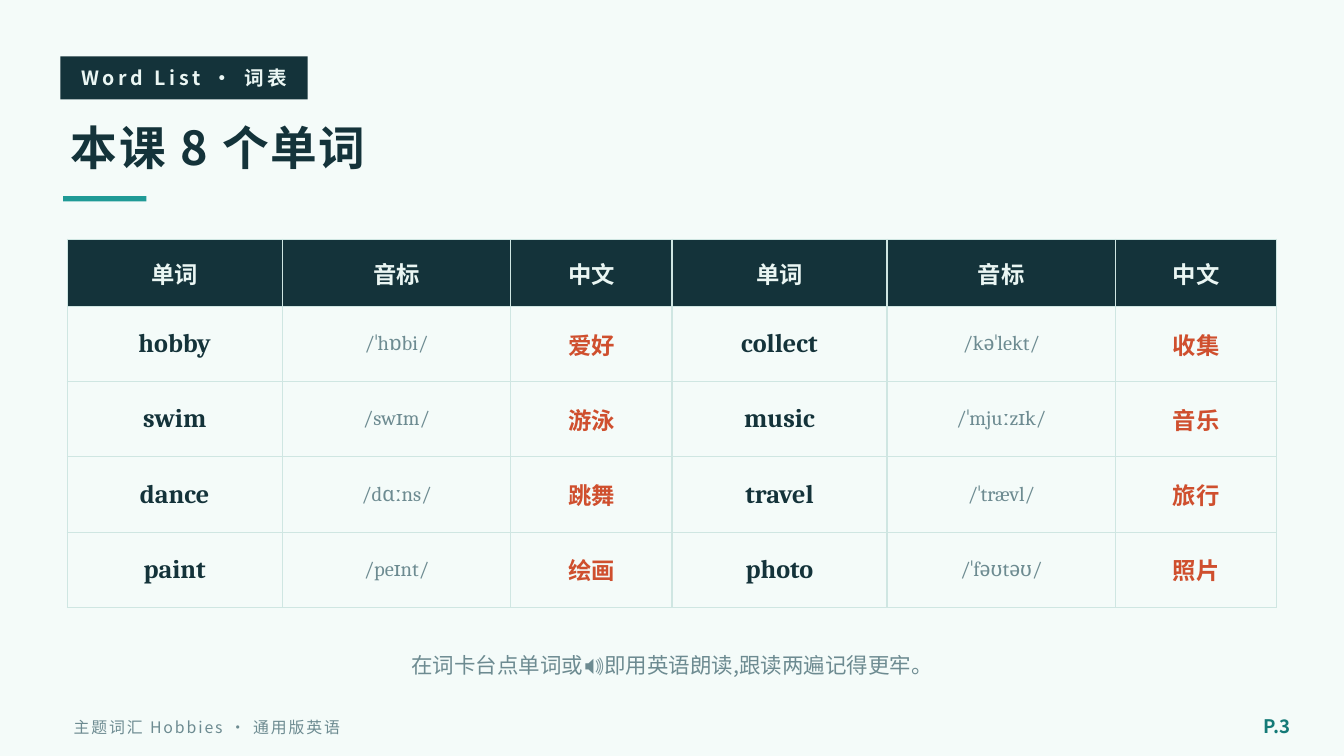
from lxml import etree
from pptx import Presentation
from pptx.dml.color import RGBColor
from pptx.enum.shapes import MSO_SHAPE
from pptx.enum.text import MSO_ANCHOR, PP_ALIGN
from pptx.oxml.ns import qn
from pptx.util import Emu, Pt

RECT = MSO_SHAPE.RECTANGLE
MIDDLE = MSO_ANCHOR.MIDDLE
LEFT, CENTER, RIGHT = PP_ALIGN.LEFT, PP_ALIGN.CENTER, PP_ALIGN.RIGHT

EMU_PER_PX = 4572
BORDER_SIDES = ("a:lnL", "a:lnR", "a:lnT", "a:lnB")


class Theme:
    paper = "F4FBF9"
    ink = "14333A"
    pale = "EAF6F3"
    accent = "1F9A96"
    deep_accent = "147A77"
    muted = "6D8B91"
    warm = "CF4F2E"
    grid = "CFE6E2"
    grid_width = 0.75
    sans = "Noto Sans CJK SC"
    serif = "Cambria"


def style(name, size, color, bold=False, spacing=0):
    font = {"name": name, "size": Pt(size), "bold": bold}
    return {"font": font, "color": color, "spacing": spacing}


TAG = style(Theme.sans, 10.5, Theme.pale, True, 2)
TITLE = style(Theme.sans, 25, Theme.ink, True, 1)
HEADER = style(Theme.sans, 12.5, Theme.pale, True)
WORD = style(Theme.serif, 14, Theme.ink, True)
PHONETIC = style(Theme.serif, 11, Theme.muted)
MEANING = style(Theme.sans, 12.5, Theme.warm, True)
HINT = style(Theme.sans, 11.5, Theme.muted)
FOOTER = style(Theme.sans, 8.5, Theme.muted, spacing=1)
PAGE = style(Theme.sans, 10, Theme.deep_accent, True)

HEADINGS = ("单词", "音标", "中文")
WORDS = [
    ("hobby", "/ˈhɒbi/", "爱好"),
    ("swim", "/swɪm/", "游泳"),
    ("dance", "/dɑːns/", "跳舞"),
    ("paint", "/peɪnt/", "绘画"),
    ("collect", "/kəˈlekt/", "收集"),
    ("music", "/ˈmjuːzɪk/", "音乐"),
    ("travel", "/ˈtrævl/", "旅行"),
    ("photo", "/ˈfəʊtəʊ/", "照片"),
]
COLUMN_WIDTHS = (320, 340, 240) * 2
HEADER_HEIGHT, ROW_HEIGHT = 100, 112


def px(value):
    return Emu(value * EMU_PER_PX)


def rgb(value):
    return RGBColor.from_string(value)


def write(tf, text, look, align):
    p = tf.paragraphs[0]
    p.alignment = align
    r = p.add_run()
    r.text = text
    for key, value in look["font"].items():
        setattr(r.font, key, value)
    r.font.color.rgb = rgb(look["color"])
    props = r.font._element
    etree.SubElement(props, qn("a:ea"), typeface=look["font"]["name"])
    if look["spacing"]:
        props.set("spc", str(look["spacing"] * 100))


def add_text(s, box, text, look, align=LEFT):
    tf = s.shapes.add_textbox(*map(px, box)).text_frame
    tf.word_wrap = True
    tf.vertical_anchor = MIDDLE
    write(tf, text, look, align)


def add_bar(s, box, color):
    sp = s.shapes.add_shape(RECT, *map(px, box))
    sp.shadow.inherit = False
    sp.fill.solid()
    sp.fill.fore_color.rgb = rgb(color)
    sp.line.fill.background()


def add_borders(cell):
    props = cell._tc.get_or_add_tcPr()
    for side in BORDER_SIDES:
        line = etree.SubElement(props, qn(side), w=str(Pt(Theme.grid_width)))
        fill = etree.SubElement(line, qn("a:solidFill"))
        etree.SubElement(fill, qn("a:srgbClr"), val=Theme.grid)


def fill_cell(cell, text, look, color):
    cell.vertical_anchor = MIDDLE
    add_borders(cell)
    cell.fill.solid()
    cell.fill.fore_color.rgb = rgb(color)
    write(cell.text_frame, text, look, CENTER)


def add_word_table(s, left, top):
    half = len(WORDS) // 2
    rows = [a + b for a, b in zip(WORDS[:half], WORDS[half:])]
    heights = [HEADER_HEIGHT] + [ROW_HEIGHT] * half
    box = (left, top, sum(COLUMN_WIDTHS), sum(heights))
    table = s.shapes.add_table(
        len(heights), len(COLUMN_WIDTHS), *map(px, box)
    ).table
    table.horz_banding = False
    for column, width in zip(table.columns, COLUMN_WIDTHS):
        column.width = px(width)
    for row, height in zip(table.rows, heights):
        row.height = px(height)
    for cell, text in zip(table.rows[0].cells, HEADINGS * 2):
        fill_cell(cell, text, HEADER, Theme.ink)
    looks = (WORD, PHONETIC, MEANING) * 2
    for i, row in enumerate(rows, 1):
        for cell, text, look in zip(table.rows[i].cells, row, looks):
            fill_cell(cell, text, look, Theme.paper)


def main():
    prs = Presentation()
    prs.slide_width, prs.slide_height = px(2000), px(1125)
    s = prs.slides.add_slide(prs.slide_layouts[6])
    s.background.fill.solid()
    s.background.fill.fore_color.rgb = rgb(Theme.paper)

    add_bar(s, (90, 84, 368, 64), Theme.ink)
    add_text(s, (90, 82, 368, 68), "Word List · 词表", TAG, CENTER)
    add_text(s, (86, 156, 1800, 124), "本课 8 个单词", TITLE)
    add_bar(s, (94, 292, 124, 8), Theme.accent)
    add_word_table(s, 100, 356)
    add_text(s, (100, 940, 1800, 100),
             "在词卡台点单词或🔊即用英语朗读,跟读两遍记得更牢。", HINT, CENTER)
    add_text(s, (90, 1052, 1200, 60), "主题词汇 Hobbies · 通用版英语", FOOTER)
    add_text(s, (1820, 1048, 120, 64), "P.3", PAGE, RIGHT)
    prs.save("out.pptx")


if __name__ == "__main__":
    main()
